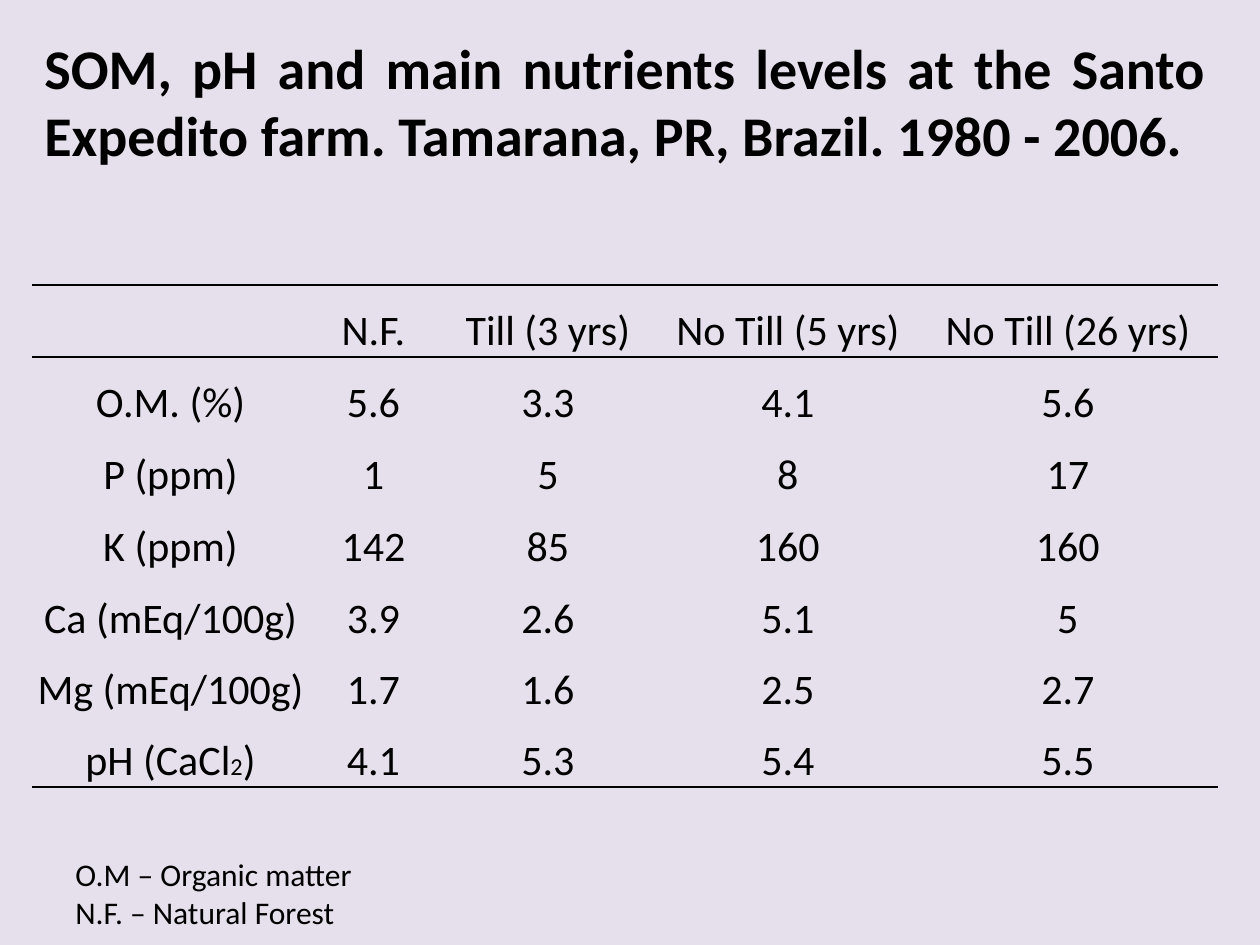
from lxml import etree
from pptx import Presentation
from pptx.dml.color import RGBColor
from pptx.enum.text import MSO_ANCHOR, MSO_AUTO_SIZE, PP_ALIGN
from pptx.oxml.ns import qn
from pptx.util import Pt

LEFT, CENTER, JUSTIFY = PP_ALIGN.LEFT, PP_ALIGN.CENTER, PP_ALIGN.JUSTIFY
TOP, MIDDLE, BOTTOM = MSO_ANCHOR.TOP, MSO_ANCHOR.MIDDLE, MSO_ANCHOR.BOTTOM
NONE, GROW = MSO_AUTO_SIZE.NONE, MSO_AUTO_SIZE.SHAPE_TO_FIT_TEXT
COLORS = {"background": "E6E0EC", "ink": "000000"}
FONT = "Calibri"

TITLE = ("SOM, pH and main nutrients levels at the Santo Expedito farm. "
         "Tamarana, PR, Brazil. 1980 - 2006.")
NOTES = ["O.M – Organic matter", "N.F. – Natural Forest"]
COL_WIDTHS = [277, 129, 220, 260, 300]
ROW_HEIGHTS = [68] + [72] * 5 + [71] * 2
RULED_ROWS = {0, 1, 7}
PH_LABEL = ("pH (CaCl", "2", ")")
ROWS = [
    [""] * 5,
    ["", "N.F.", "Till (3 yrs)", "No Till (5 yrs)", "No Till (26 yrs)"],
    ["O.M. (%)", "5.6", "3.3", "4.1", "5.6"],
    ["P (ppm)", "1", "5", "8", "17"],
    ["K (ppm)", "142", "85", "160", "160"],
    ["Ca (mEq/100g)", "3.9", "2.6", "5.1", "5"],
    ["Mg (mEq/100g)", "1.7", "1.6", "2.5", "2.7"],
    [PH_LABEL, "4.1", "5.3", "5.4", "5.5"],
]


def px(n):
    return round(n * 914400 / 126)


def rgb(name):
    return RGBColor.from_string(COLORS[name])


class Deck:
    def __init__(self, width, height):
        self.prs = Presentation()
        self.prs.slide_width, self.prs.slide_height = px(width), px(height)
        self.s = self.prs.slides.add_slide(self.prs.slide_layouts[6])
        fill = self.s.background.fill
        fill.solid()
        fill.fore_color.rgb = rgb("background")

    def run(self, p, text, size, bold=False, baseline=0):
        r = p.add_run()
        r.text = text
        r.font.name, r.font.size, r.font.bold = FONT, Pt(size), bold
        r.font.color.rgb = rgb("ink")
        if baseline:
            r.font._element.set("baseline", str(baseline))

    def text(self, box, lines, size, bold=False, align=LEFT, anchor=TOP,
             wrap=True, auto_size=NONE):
        sp = self.s.shapes.add_textbox(*map(px, box))
        tf = sp.text_frame
        tf.word_wrap, tf.auto_size, tf.vertical_anchor = wrap, auto_size, anchor
        for i, line in enumerate(lines):
            p = tf.add_paragraph() if i else tf.paragraphs[0]
            p.alignment = align
            self.run(p, line, size, bold)

    def borders(self, cell, ruled):
        tcPr = cell._tc.get_or_add_tcPr()
        for i, side in enumerate(("lnL", "lnR", "lnT", "lnB")):
            ln = etree.Element(qn("a:" + side), w=str(Pt(1)))
            if side in ruled:
                fill = etree.SubElement(ln, qn("a:solidFill"))
                etree.SubElement(fill, qn("a:srgbClr"), val=COLORS["ink"])
            else:
                etree.SubElement(ln, qn("a:noFill"))
            tcPr.insert(i, ln)

    def cell(self, cell, content, size):
        cell.fill.background()
        if not content:
            return
        cell.vertical_anchor = BOTTOM
        cell.margin_left = cell.margin_right = 0
        cell.margin_top = cell.margin_bottom = 0
        p = cell.text_frame.paragraphs[0]
        p.alignment = CENTER
        parts = [content] if isinstance(content, str) else content
        for i, part in enumerate(parts):
            self.run(p, part, size, baseline=-25 if i % 2 else 0)

    def table(self, left, top, widths, heights, rows, ruled_rows, size):
        frame = self.s.shapes.add_table(
            len(rows), len(widths), px(left), px(top),
            px(sum(widths)), px(sum(heights)))
        table = frame.table
        table.first_row = table.horz_banding = False
        for col, width in zip(table.columns, widths):
            col.width = px(width)
        for i, (row, height) in enumerate(zip(rows, heights)):
            table.rows[i].height = px(height)
            ruled = {side for side, r in (("lnT", i - 1), ("lnB", i))
                     if r in ruled_rows}
            for j, content in enumerate(row):
                self.cell(table.cell(i, j), content, size)
                self.borders(table.cell(i, j), ruled)


def main():
    deck = Deck(1260, 945)
    deck.text((32, -21, 1187, 243), [TITLE], 32, bold=True,
              align=JUSTIFY, anchor=MIDDLE)
    deck.table(32, 217, COL_WIDTHS, ROW_HEIGHTS, ROWS, RULED_ROWS, 24)
    deck.text((63, 849, 305, 127), NOTES, 18, wrap=False, auto_size=GROW)
    deck.prs.save("out.pptx")


if __name__ == "__main__":
    main()
